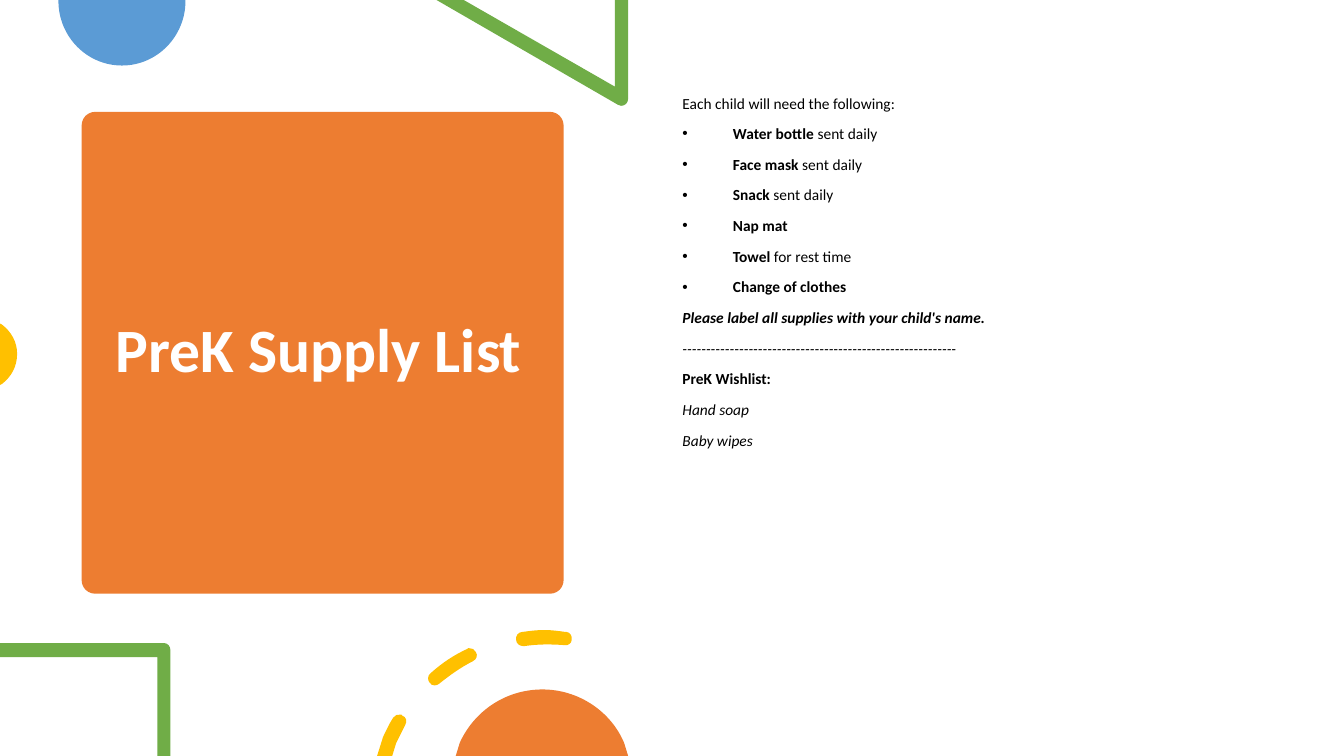
"""Build the PreK supply list slide."""
from dataclasses import dataclass

from lxml import etree
from pptx import Presentation
from pptx.dml.color import RGBColor
from pptx.enum.shapes import MSO_SHAPE
from pptx.enum.text import MSO_ANCHOR, MSO_AUTO_SIZE, PP_ALIGN
from pptx.oxml.ns import qn
from pptx.util import Inches, Pt

ROUND = MSO_SHAPE.ROUNDED_RECTANGLE
LEFT = PP_ALIGN.LEFT
MIDDLE = MSO_ANCHOR.MIDDLE
TOP = MSO_ANCHOR.TOP
FIXED = MSO_AUTO_SIZE.NONE


@dataclass(frozen=True)
class Theme:
    """Colours, font and type sizes."""
    orange: RGBColor = RGBColor.from_string("ED7D31")
    blue: RGBColor = RGBColor.from_string("5B9BD5")
    green: RGBColor = RGBColor.from_string("70AD47")
    gold: RGBColor = RGBColor.from_string("FFC000")
    white: RGBColor = RGBColor.from_string("FFFFFF")
    black: RGBColor = RGBColor.from_string("000000")
    font: str = "Calibri"
    head: int = 44
    body: int = 11


def paint(shape, color):
    """Give a shape a flat fill with no line or shadow."""
    shape.shadow.inherit = False
    shape.fill.solid()
    shape.fill.fore_color.rgb = color
    shape.line.fill.background()


def dots(step):
    """Split a step into its points: one for a line, three for a curve."""
    return [(Inches(x), Inches(y)) for x, y in zip(step[::2], step[1::2])]


theme = Theme()
deck = Presentation()
deck.slide_width, deck.slide_height = Inches(13.33), Inches(7.5)
slide = deck.slides.add_slide(deck.slide_layouts[5])
shapes = slide.shapes

card = shapes.add_shape(ROUND, Inches(0.81), Inches(1.11), Inches(4.78), Inches(4.78))
card.adjustments[0] = 0.028
paint(card, theme.orange)

title = shapes.title
title.left, title.top = Inches(1.05), Inches(1.22)
title.width, title.height = Inches(4.31), Inches(4.56)
shapes._spTree.append(title._element)
frame = title.text_frame
frame.text = "PreK Supply List"
frame.word_wrap = True
frame.auto_size = FIXED
frame.vertical_anchor = MIDDLE
para = frame.paragraphs[0]
para.alignment = LEFT
para.line_spacing = 0.9
para.font.name, para.font.size = theme.font, Pt(theme.head)
para.font.bold = True
para.font.color.rgb = theme.white

circle = [(1.84, 0), (0.58, 0), (0.58, 0.01),
          (0.58, 0.36, 0.86, 0.65, 1.21, 0.65), (1.56, 0.65, 1.84, 0.36, 1.84, 0.01)]
wedge = [(6.23, 0), (6.1, 0), (6.1, 0.86), (4.6, 0), (4.33, 0), (6.13, 1.04),
         (6.14, 1.05, 6.15, 1.05, 6.16, 1.05), (6.2, 1.05, 6.23, 1.02, 6.23, 0.98)]
edge = [(0, 3.21), (0, 3.82), (0.02, 3.81),
        (0.11, 3.74, 0.17, 3.64, 0.17, 3.51), (0.17, 3.39, 0.11, 3.29, 0.02, 3.22)]
corner = [(1.63, 6.38), (0, 6.38), (0, 6.52), (1.56, 6.52), (1.56, 7.5), (1.69, 7.5),
          (1.69, 6.45), (1.69, 6.41, 1.66, 6.38, 1.63, 6.38)]
dashes = [
    [(3.97, 7.09), (3.94, 7.08, 3.92, 7.1, 3.9, 7.12), (3.86, 7.18, 3.83, 7.25, 3.8, 7.31),
     (3.74, 7.5), (3.89, 7.5), (3.93, 7.37), (3.96, 7.31, 3.99, 7.25, 4.02, 7.19),
     (4.04, 7.16, 4.03, 7.11, 3.99, 7.1), (3.99, 7.09, 3.98, 7.09, 3.97, 7.09)],
    [(4.65, 6.43), (4.65, 6.43, 4.64, 6.43, 4.63, 6.44), (4.5, 6.5, 4.38, 6.58, 4.27, 6.68),
     (4.24, 6.7, 4.24, 6.75, 4.26, 6.77), (4.27, 6.79, 4.29, 6.8, 4.31, 6.8), (4.31, 6.8),
     (4.33, 6.8, 4.35, 6.79, 4.36, 6.78), (4.46, 6.7, 4.57, 6.62, 4.69, 6.56),
     (4.73, 6.54, 4.74, 6.5, 4.72, 6.47), (4.71, 6.44, 4.68, 6.43, 4.65, 6.43)],
    [(5.4, 6.25), (5.32, 6.25, 5.25, 6.26, 5.18, 6.27), (5.14, 6.27, 5.11, 6.31, 5.12, 6.35),
     (5.12, 6.38, 5.15, 6.41, 5.19, 6.41), (5.19, 6.41, 5.19, 6.41, 5.2, 6.41),
     (5.33, 6.39, 5.46, 6.39, 5.6, 6.4), (5.63, 6.41, 5.67, 6.38, 5.67, 6.35),
     (5.68, 6.31, 5.65, 6.27, 5.62, 6.27), (5.62, 6.27, 5.61, 6.27, 5.61, 6.27),
     (5.54, 6.26, 5.47, 6.25, 5.4, 6.25)],
]
dome = [(5.38, 6.84), (5.01, 6.84, 4.7, 7.06, 4.56, 7.37), (4.52, 7.5), (6.23, 7.5),
        (6.19, 7.37), (6.06, 7.06, 5.74, 6.84, 5.38, 6.84)]


def trace(parts, color):
    """Draw closed outlines, joining each curve's three points into a Bezier."""
    pen = shapes.build_freeform(*dots(parts[0][0])[0])
    for i, part in enumerate(parts):
        if i:
            pen.move_to(*dots(part[0])[0])
        pen.add_line_segments([dot for step in part[1:] for dot in dots(step)])
    shape = pen.convert_to_shape()
    paint(shape, color)
    legs = iter(list(shape._element.iter(qn("a:lnTo"))))
    for step in (step for part in parts for step in part[1:]):
        leg = next(legs)
        if len(step) == 6:
            curve = etree.Element(qn("a:cubicBezTo"))
            leg.addprevious(curve)
            for old in (leg, next(legs), next(legs)):
                curve.append(old[0])
                old.getparent().remove(old)


for parts, color in [([circle], theme.blue), ([wedge], theme.green), ([edge], theme.gold)]:
    trace(parts, color)

needs = [("Water bottle", " sent daily"), ("Face mask ", "sent daily"),
         ("Snack", " sent daily"), ("Nap mat", ""), ("Towel ", "for rest time"),
         ("Change of clothes", "")]
lines = [("", "Each child will need the following:", False, False)]
lines += [(name, note, True, False) for name, note in needs]
lines += [("Please label all supplies with your child's name.", "", False, True),
          ("", "-" * 58, False, True),
          ("PreK Wishlist:", "", False, False),
          ("", "Hand soap", False, True),
          ("", "Baby wipes", False, True)]

box = shapes.add_textbox(Inches(6.67), Inches(0.9), Inches(5.75), Inches(5.35))
frame = box.text_frame
frame.word_wrap = True
frame.auto_size = FIXED
frame.vertical_anchor = TOP
for i, (strong, plain, listed, slant) in enumerate(lines):
    para = frame.add_paragraph() if i else frame.paragraphs[0]
    para.alignment = LEFT
    para.line_spacing = 0.9
    para.space_before = Pt(10)
    para.font.name, para.font.size = theme.font, Pt(theme.body)
    para.font.color.rgb = theme.black
    para.font.italic = slant
    for text, bold in [(strong, True), (plain, False)]:
        if text:
            run = para.add_run()
            run.text = text
            run.font.bold = bold
    if listed:
        props = para._p.get_or_add_pPr()
        props.set("marL", str(Inches(0.5)))
        props.set("indent", str(-Inches(0.5)))
        last = props.find(qn("a:defRPr"))
        last.addprevious(etree.Element(qn("a:buFont"), typeface="Arial"))
        last.addprevious(etree.Element(qn("a:buChar"), char="•"))

for parts, color in [([corner], theme.green), (dashes, theme.gold), ([dome], theme.orange)]:
    trace(parts, color)

deck.save("out.pptx")
